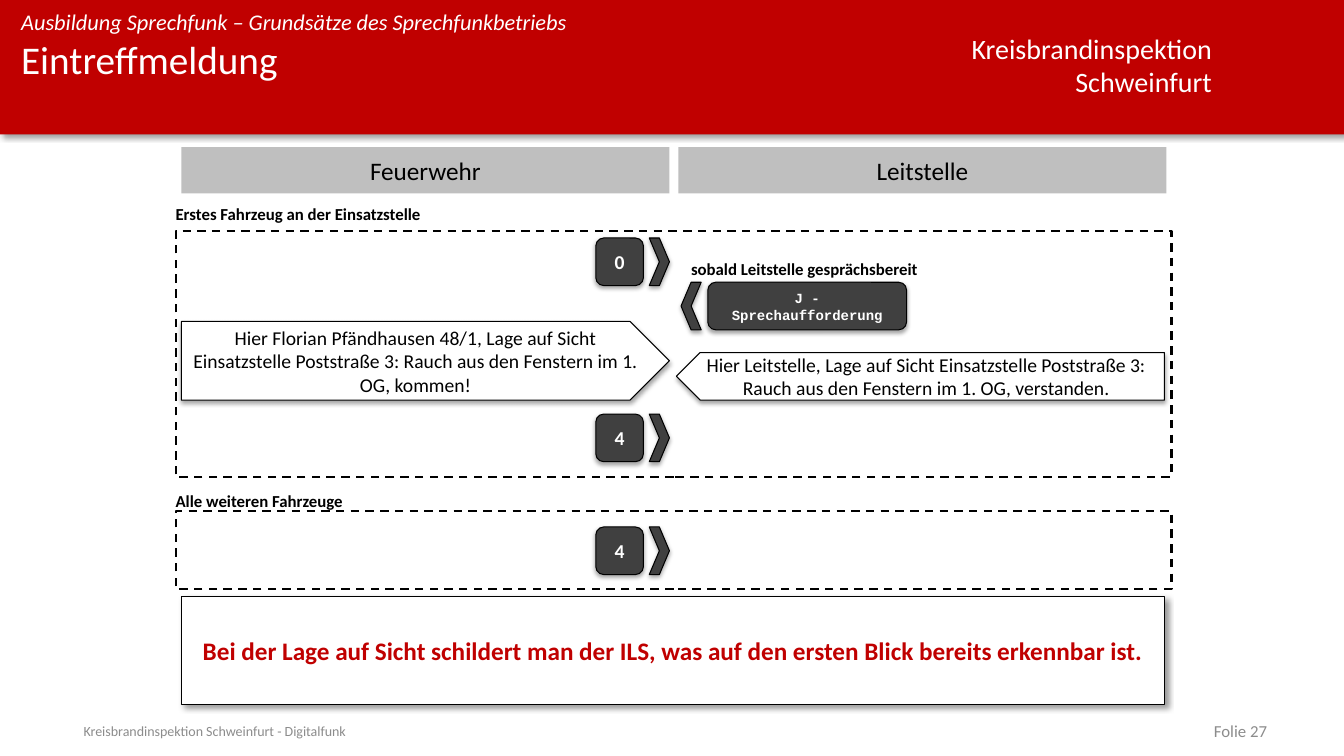
from dataclasses import dataclass
from typing import Optional

from lxml.etree import SubElement
from pptx import Presentation
from pptx.dml.color import RGBColor
from pptx.enum.dml import MSO_LINE_DASH_STYLE as Dash
from pptx.enum.shapes import MSO_SHAPE as Preset
from pptx.enum.text import MSO_ANCHOR as Anchor, MSO_AUTO_SIZE as AutoSize, PP_ALIGN as Align
from pptx.oxml.ns import qn
from pptx.util import Pt

RED = RGBColor(0xC0, 0x00, 0x00)
WHITE = RGBColor(0xFF, 0xFF, 0xFF)
BLACK = RGBColor(0x00, 0x00, 0x00)
SILVER = RGBColor(0xBF, 0xBF, 0xBF)
CHARCOAL = RGBColor(0x40, 0x40, 0x40)
FOOTER_GREY = RGBColor(0x8C, 0x8C, 0x8C)


@dataclass(frozen=True)
class Shadow:
    opacity: int
    blur: float
    distance: float
    angle: int


@dataclass(frozen=True)
class Style:
    size: float
    color: RGBColor = BLACK
    bold: bool = False
    italic: bool = False
    align: Align = Align.LEFT
    anchor: Anchor = Anchor.TOP
    font: str = "Calibri"
    inset: Optional[float] = None
    wrap: bool = True


@dataclass(frozen=True)
class Block:
    """A preset shape, or a plain text box when preset is None."""
    left: float
    top: float
    width: float
    height: float
    preset: Optional[Preset] = None
    text: str = ""
    style: Optional[Style] = None
    fill: Optional[RGBColor] = None
    line: float = 0
    dashed: bool = False
    shadow: Optional[Shadow] = None
    flipped: bool = False


SLANTED = Shadow(40, 4, 3, 45)
BELOW = Shadow(35, 3.1, 1.8, 90)

COLUMN_HEAD = Style(18, align=Align.CENTER, inset=5.8, wrap=False)
SPEECH = Style(14, align=Align.CENTER, anchor=Anchor.MIDDLE)
KEY = Style(14, WHITE, bold=True, align=Align.CENTER, anchor=Anchor.MIDDLE)
WIDE_KEY = Style(10, WHITE, bold=True, align=Align.CENTER, anchor=Anchor.MIDDLE, font="Courier New")
SUMMARY = Style(18, RED, bold=True, align=Align.CENTER, anchor=Anchor.MIDDLE)
FRAME_LABEL = Style(12, bold=True, inset=0, wrap=False)
HINT = Style(12, bold=True, wrap=False)
TOPIC = Style(16, WHITE, italic=True, inset=0)
TITLE = Style(28, WHITE, inset=0)
ORGANISATION = Style(20, WHITE, align=Align.RIGHT, wrap=False)
FOOTER = Style(10, FOOTER_GREY, anchor=Anchor.MIDDLE)
PAGE_NUMBER = Style(12, FOOTER_GREY, align=Align.RIGHT, anchor=Anchor.MIDDLE)

COLUMN_LEFT, COLUMN_WIDTH = 129.6, 348.6
KEY_SIZE, ARROW_WIDTH = 34, 14.4


def write(shape, text: str, style: Style) -> None:
    frame = shape.text_frame
    frame.text = text
    frame.word_wrap = style.wrap
    frame.auto_size = AutoSize.NONE
    frame.vertical_anchor = style.anchor
    if style.inset is not None:
        frame.margin_left = frame.margin_right = Pt(style.inset)
        frame.margin_top = frame.margin_bottom = Pt(style.inset)
    for para in frame.paragraphs:
        para.alignment = style.align
        font = para.font
        font.name, font.size = style.font, Pt(style.size)
        font.bold, font.italic = style.bold, style.italic
        font.color.rgb = style.color


def cast_shadow(shape, shadow: Shadow) -> None:
    effects = shape._element.spPr.find(qn("a:effectLst"))
    outer = SubElement(effects, qn("a:outerShdw"), blurRad=str(Pt(shadow.blur)),
                       dist=str(Pt(shadow.distance)), dir=str(shadow.angle * 60000),
                       algn="ctr", rotWithShape="0")
    color = SubElement(outer, qn("a:srgbClr"), val=str(BLACK))
    SubElement(color, qn("a:alpha"), val=str(shadow.opacity * 1000))


def draw(page, block: Block) -> None:
    box = [Pt(v) for v in (block.left, block.top, block.width, block.height)]
    if block.preset is None:
        shape = page.shapes.add_textbox(*box)
    else:
        shape = page.shapes.add_shape(block.preset, *box)
        shape.shadow.inherit = False
        if block.fill is None:
            shape.fill.background()
        else:
            shape.fill.solid()
            shape.fill.fore_color.rgb = block.fill
        if block.line:
            shape.line.color.rgb = BLACK
            shape.line.width = Pt(block.line)
        else:
            shape.line.fill.background()
        if block.dashed:
            shape.line.dash_style = Dash.DASH
        if block.shadow:
            cast_shadow(shape, block.shadow)
        if block.flipped:
            shape._element.spPr.xfrm.set("flipH", "1")
    if block.style:
        write(shape, block.text, block.style)


def dark(preset: Preset, left: float, top: float, width: float, text: str = "",
         style: Optional[Style] = None, flipped: bool = False) -> Block:
    return Block(left, top, width, KEY_SIZE, preset, text, style, CHARCOAL, 0.75,
                 shadow=BELOW, flipped=flipped)


def status_key(digit: str, top: float) -> list[Block]:
    return [dark(Preset.ROUNDED_RECTANGLE, 425.6, top, KEY_SIZE, digit, KEY),
            dark(Preset.CHEVRON, 463.8, top, ARROW_WIDTH)]


def speech(left: float, top: float, height: float, text: str, flipped: bool = False) -> Block:
    return Block(left, top, COLUMN_WIDTH, height, Preset.PENTAGON, text, SPEECH, WHITE, 0.75,
                 shadow=BELOW, flipped=flipped)


def framed(label: str, label_top: float, top: float, height: float) -> list[Block]:
    return [Block(125.4, label_top, 180, 14.4, text=label, style=FRAME_LABEL),
            Block(125.4, top, 711.4, height, Preset.RECTANGLE, line=1.5, dashed=True)]


def main() -> None:
    deck = Presentation()
    deck.slide_width, deck.slide_height = Pt(960), Pt(540)
    page = deck.slides.add_slide(deck.slide_layouts[5])

    # Red header band, with the title brought in front of it
    draw(page, Block(0, 0, 960, 96, Preset.RECTANGLE, fill=RED, shadow=SLANTED))
    draw(page, Block(684.8, 18.7, 188, 55.6, text="Kreisbrandinspektion\nSchweinfurt",
                     style=ORGANISATION))
    draw(page, Block(15.1, 5.8, 607, 19.4,
                     text="Ausbildung Sprechfunk – Grundsätze des Sprechfunkbetriebs", style=TOPIC))
    title = page.shapes.title
    title.left, title.top, title.width, title.height = Pt(15.1), Pt(25.2), Pt(607), Pt(71)
    write(title, "Eintreffmeldung", TITLE)
    page.shapes._spTree.append(title._element)

    # Column heads
    for column, name in enumerate(("Feuerwehr", "Leitstelle")):
        draw(page, Block(COLUMN_LEFT + column * 355, 105.1, COLUMN_WIDTH, 33.1, Preset.RECTANGLE,
                         name, COLUMN_HEAD, SILVER))

    # Radio exchange, summary and footer
    blocks = [
        *framed("Erstes Fahrzeug an der Einsatzstelle", 145.8, 165, 175.7),
        *status_key("0", 170),
        Block(486.5, 181.4, 181.4, 21.6, text="sobald Leitstelle gesprächsbereit", style=HINT),
        dark(Preset.CHEVRON, 486.5, 201.6, ARROW_WIDTH, flipped=True),
        dark(Preset.ROUNDED_RECTANGLE, 505.6, 201.6, 142, "J - Sprechaufforderung", WIDE_KEY),
        speech(COLUMN_LEFT, 229.6, 56.2, "Hier Florian Pfändhausen 48/1, Lage auf Sicht "
               "Einsatzstelle Poststraße 3: Rauch aus den Fenstern im 1. OG, kommen!"),
        speech(483.2, 251.8, 34, "Hier Leitstelle, Lage auf Sicht Einsatzstelle Poststraße 3: "
               "Rauch aus den Fenstern im 1. OG, verstanden.", flipped=True),
        *status_key("4", 295.8),
        *framed("Alle weiteren Fahrzeuge", 350.6, 365, 55.6),
        *status_key("4", 376.4),
        Block(COLUMN_LEFT, 426.2, 702.2, 77, Preset.RECTANGLE,
              "Bei der Lage auf Sicht schildert man der ILS, "
              "was auf den ersten Blick bereits erkennbar ist.",
              SUMMARY, WHITE, 0.75, shadow=SLANTED),
        Block(52.6, 515, 579.6, 14.4, text="Kreisbrandinspektion Schweinfurt - Digitalfunk",
              style=FOOTER),
        Block(688.3, 515, 223.9, 14.4, text="Folie 27", style=PAGE_NUMBER),
    ]
    for block in blocks:
        draw(page, block)

    deck.save("out.pptx")


if __name__ == "__main__":
    main()
